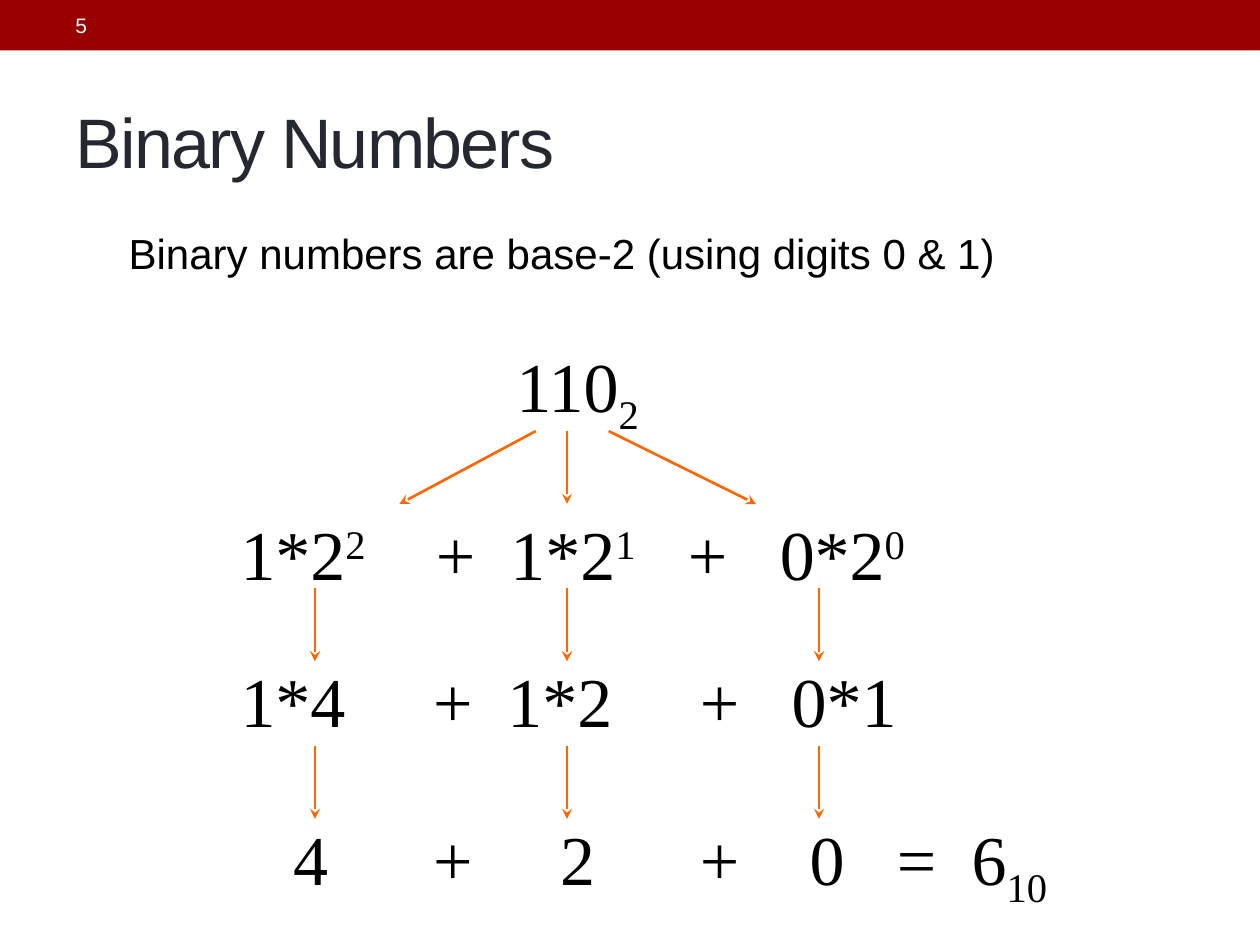
from lxml.etree import SubElement as Sub
from pptx import Presentation
from pptx.dml.color import RGBColor as RGB
from pptx.enum.shapes import MSO_CONNECTOR as Line, MSO_SHAPE as Shape
from pptx.enum.text import MSO_ANCHOR as Anchor, MSO_AUTO_SIZE as Auto, PP_ALIGN as Align
from pptx.oxml.ns import qn
from pptx.util import Cm, Pt

HUES = {"bar": "990000", "title": "252731", "text": "000000",
        "page": "FFFFFF", "arrow": "FF6600"}
SANS, SERIF = "Arial", "Times New Roman"
SUP, LOW = 30, -25

# Top, width, left inset, tab stops (cm), then runs of (text, baseline)
ROWS = [
    (10.16, 15.44, 0.61, (3.94, 5.44, 9.02, 10.87),
     [("1*2", 0), ("2", SUP), ("\t+\t1*2", 0), ("1", SUP),
      ("\t+\t0*2", 0), ("0", SUP)]),
    (13.13, 15.44, 0.61, (3.88, 5.38, 9.26, 11.11),
     [("1*4\t+\t1*2\t+\t0*1", 0)]),
    (16.31, 17.78, 1.67, (2.82, 5.38, 8.2, 10.41, 12.17, 13.68),
     [("4\t+\t2\t+\t0\t=\t6", 0), ("10", LOW)]),
]
COLS = (6.35, 11.43, 16.51)
DROP = 1.47


def style(run, face, size, hue):
    font = run.font
    font.name, font.size = face, Pt(size)
    font.color.rgb = RGB.from_string(HUES[hue])


def place(shape, x, y, w, h):
    shape.left, shape.top, shape.width, shape.height = map(Cm, (x, y, w, h))


def add_bar(slide):
    bar = slide.shapes.add_shape(Shape.RECTANGLE, 0, 0, Cm(25.4), Cm(1.02))
    bar.shadow.inherit = False
    bar.fill.solid()
    bar.fill.fore_color.rgb = RGB.from_string(HUES["bar"])
    bar.line.fill.background()


def add_page(slide, text):
    frame = slide.shapes.add_textbox(Cm(1.27), Cm(0.05), Cm(8.05), Cm(0.91)).text_frame
    frame.word_wrap = True
    frame.vertical_anchor = Anchor.MIDDLE
    frame.text = text
    style(frame.paragraphs[0].runs[0], SANS, 12, "page")


def fill_holder(shape, text, box, size, hue, anchor):
    """Move a placeholder, set its text and return the paragraph."""
    place(shape, *box)
    frame = shape.text_frame
    frame.text = text
    frame.auto_size = Auto.NONE
    frame.vertical_anchor = anchor
    para = frame.paragraphs[0]
    para.alignment = Align.LEFT
    style(para.runs[0], SANS, size, hue)
    return para


def set_plain(para):
    """Hanging indent without a bullet, with 20% space before."""
    props = para._p.get_or_add_pPr()
    props.set("marL", str(Cm(0.5)))
    props.set("indent", str(Cm(-0.5)))
    space = Sub(props, qn("a:spcBef"))
    Sub(space, qn("a:spcPct")).set("val", "20000")
    Sub(props, qn("a:buNone"))


def add_math(slide, x, y, w, parts, inset=0.25, tabs=(), wrap=True):
    """One line of serif text with raised or lowered runs and tab stops."""
    frame = slide.shapes.add_textbox(Cm(x), Cm(y), Cm(w), Cm(1.96)).text_frame
    frame.word_wrap = wrap
    frame.auto_size = Auto.SHAPE_TO_FIT_TEXT
    frame.margin_left = Cm(inset)
    para = frame.paragraphs[0]
    if tabs:
        stops = Sub(para._p.get_or_add_pPr(), qn("a:tabLst"))
        for pos in tabs:
            Sub(stops, qn("a:tab"), pos=str(Cm(pos)), algn="l")
    for text, base in parts:
        run = para.add_run()
        run.text = text
        style(run, SERIF, 40, "text")
        if base:
            run.font._element.set("baseline", str(base * 1000))


def add_arrow(slide, x, y, end):
    line = slide.shapes.add_connector(
        Line.STRAIGHT, Cm(x), Cm(y), Cm(end), Cm(y + DROP))
    line.line.color.rgb = RGB.from_string(HUES["arrow"])
    line.line.width = Pt(1.5)
    Sub(line.line._get_or_add_ln(), qn("a:tailEnd"), type="stealth")
    Sub(line._element.spPr, qn("a:effectLst"))


def main():
    deck = Presentation()
    deck.slide_width, deck.slide_height = Cm(25.4), Cm(19.05)
    slide = deck.slides.add_slide(deck.slide_layouts[1])
    add_bar(slide)
    add_page(slide, "5")
    title, body = slide.placeholders
    para = fill_holder(title, "Binary Numbers", (1.27, 1.47, 22.86, 2.74),
                       40, "title", Anchor.MIDDLE)
    para.runs[0].font._element.set("spc", "-100")
    para = fill_holder(body, "Binary numbers are base-2 (using digits 0 & 1)",
                       (2.34, 4.45, 21.79, 2.34), 24, "text", Anchor.TOP)
    set_plain(para)

    add_math(slide, 10.16, 6.78, 3.1, [("110", 0), ("2", LOW)], wrap=False)
    for top, width, inset, tabs, parts in ROWS:
        add_math(slide, 4.24, top, width, parts, inset, tabs)
    for start, end in ((10.8, 8.05), (11.43, 11.43), (12.27, 15.24)):
        add_arrow(slide, start, 8.69, end)
    for top in (11.86, 15.04):
        for x in COLS:
            add_arrow(slide, x, top, x)
    deck.save("out.pptx")


if __name__ == "__main__":
    main()
